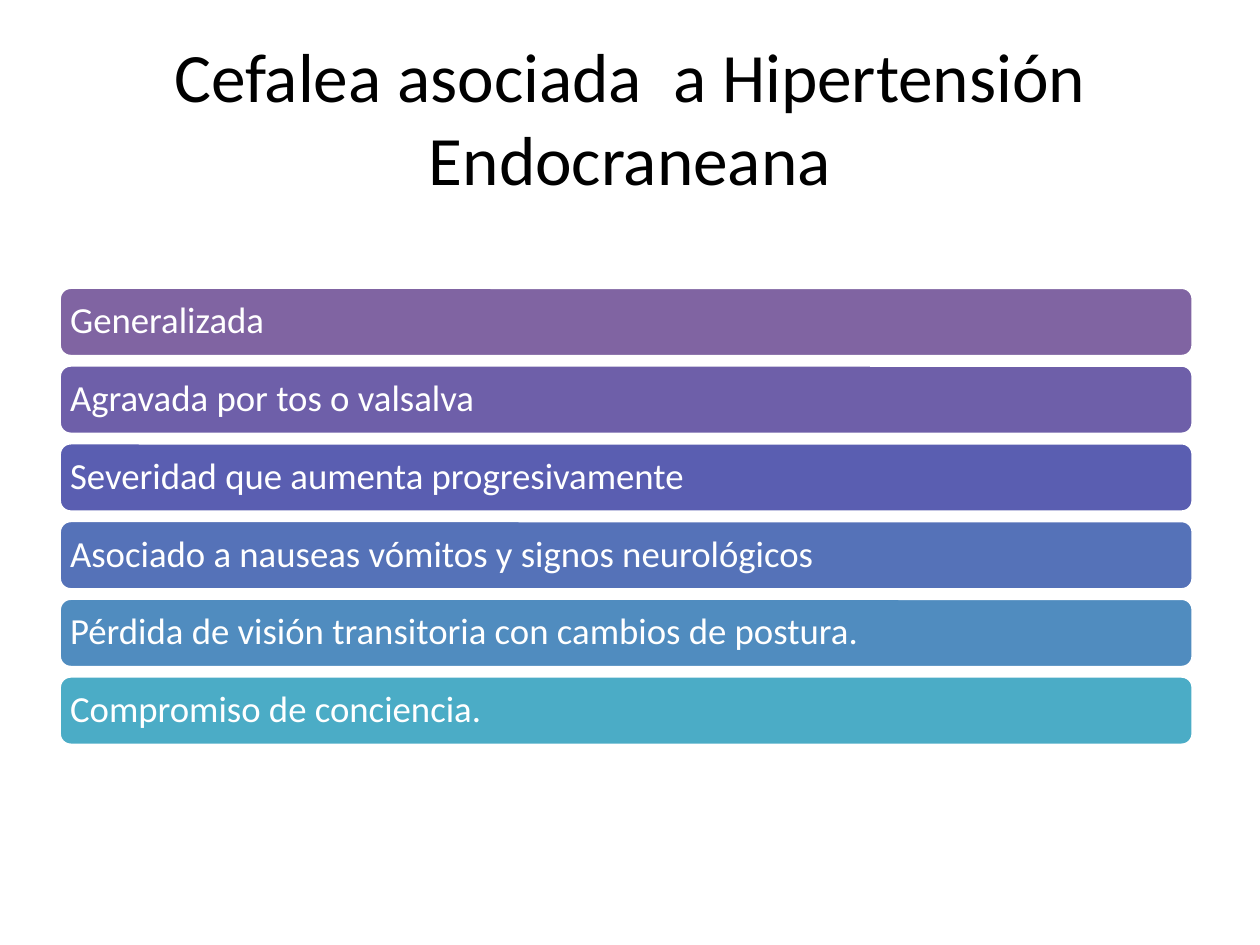
from dataclasses import dataclass

import pptx
import pptx.dml.color
import pptx.enum.shapes
import pptx.enum.text
import pptx.util


@dataclass(frozen=True)
class Theme:
    font: str = "Calibri"
    ink: str = "000000"
    paper: str = "FFFFFF"
    bars: tuple = ("8064A2", "6E5FA9", "5A5EB1", "5572B8", "508CBF", "4BACC6")
    title_size: float = 39.6
    bar_size: float = 21
    bar_line: float = 2


def color(value):
    return pptx.dml.color.RGBColor.from_string(value)


def write(shape, text, *, font, size, ink, align, inset_x, inset_y,
          line_spacing=1.0, space_after=0):
    """Put one formatted paragraph, vertically centred, into a shape."""
    frame = shape.text_frame
    frame.word_wrap = True
    frame.vertical_anchor = pptx.enum.text.MSO_ANCHOR.MIDDLE
    frame.margin_left = frame.margin_right = pptx.util.Inches(inset_x)
    frame.margin_top = frame.margin_bottom = pptx.util.Inches(inset_y)
    para = frame.paragraphs[0]
    para.alignment = align
    para.line_spacing = line_spacing
    para.space_after = pptx.util.Pt(space_after)
    span = para.add_run()
    span.text = text
    span.font.name = font
    span.font.size = pptx.util.Pt(size)
    span.font.color.rgb = color(ink)


class SlideBuilder:
    """Holds the theme and the current slide; lengths are shares of the slide."""

    def __init__(self, deck, theme):
        self.deck = deck
        self.theme = theme
        self.page = deck.slides.add_slide(deck.slide_layouts[6])

    def place(self, left, top, width, height):
        across, down = self.deck.slide_width, self.deck.slide_height
        return (int(left * across), int(top * down),
                int(width * across), int(height * down))

    def title(self, text, *area):
        box = self.page.shapes.add_textbox(*self.place(*area))
        write(box, text, font=self.theme.font, size=self.theme.title_size,
              ink=self.theme.ink, align=pptx.enum.text.PP_ALIGN.CENTER,
              inset_x=0.1, inset_y=0.05)

    def bar(self, text, fill, *area):
        shape = self.page.shapes.add_shape(
            pptx.enum.shapes.MSO_SHAPE.ROUNDED_RECTANGLE, *self.place(*area))
        shape.shadow.inherit = False
        shape.fill.solid()
        shape.fill.fore_color.rgb = color(fill)
        shape.line.color.rgb = color(self.theme.paper)
        shape.line.width = pptx.util.Pt(self.theme.bar_line)
        # The rounded corners add a little to the side inset
        write(shape, text, font=self.theme.font, size=self.theme.bar_size,
              ink=self.theme.paper, align=pptx.enum.text.PP_ALIGN.LEFT,
              inset_x=0.06, inset_y=0.06, line_spacing=0.9)

    def bar_list(self, texts, left, top, width, height, pitch):
        for row, (text, fill) in enumerate(zip(texts, self.theme.bars)):
            self.bar(text, fill, left, top + row * pitch, width, height)


SYMPTOMS = (
    "Generalizada",
    "Agravada por tos o valsalva",
    "Severidad que aumenta progresivamente",
    "Asociado a nauseas vómitos y signos neurológicos",
    "Pérdida de visión transitoria con cambios de postura.",
    "Compromiso de conciencia.",
)


def main():
    deck = pptx.Presentation()
    deck.slide_width = pptx.util.Inches(10)
    deck.slide_height = pptx.util.Inches(7.5)
    slide = SlideBuilder(deck, Theme())

    # Heading
    slide.title("Cefalea asociada  a Hipertensión Endocraneana",
                0.05, 0.3 / 7.5, 0.9, 1.25 / 7.5)

    # Stack of symptom bars
    slide.bar_list(SYMPTOMS, left=0.047, top=2.28 / 7.5, width=0.9,
                   height=0.55 / 7.5, pitch=0.617 / 7.5)

    deck.save("out.pptx")


if __name__ == "__main__":
    main()
